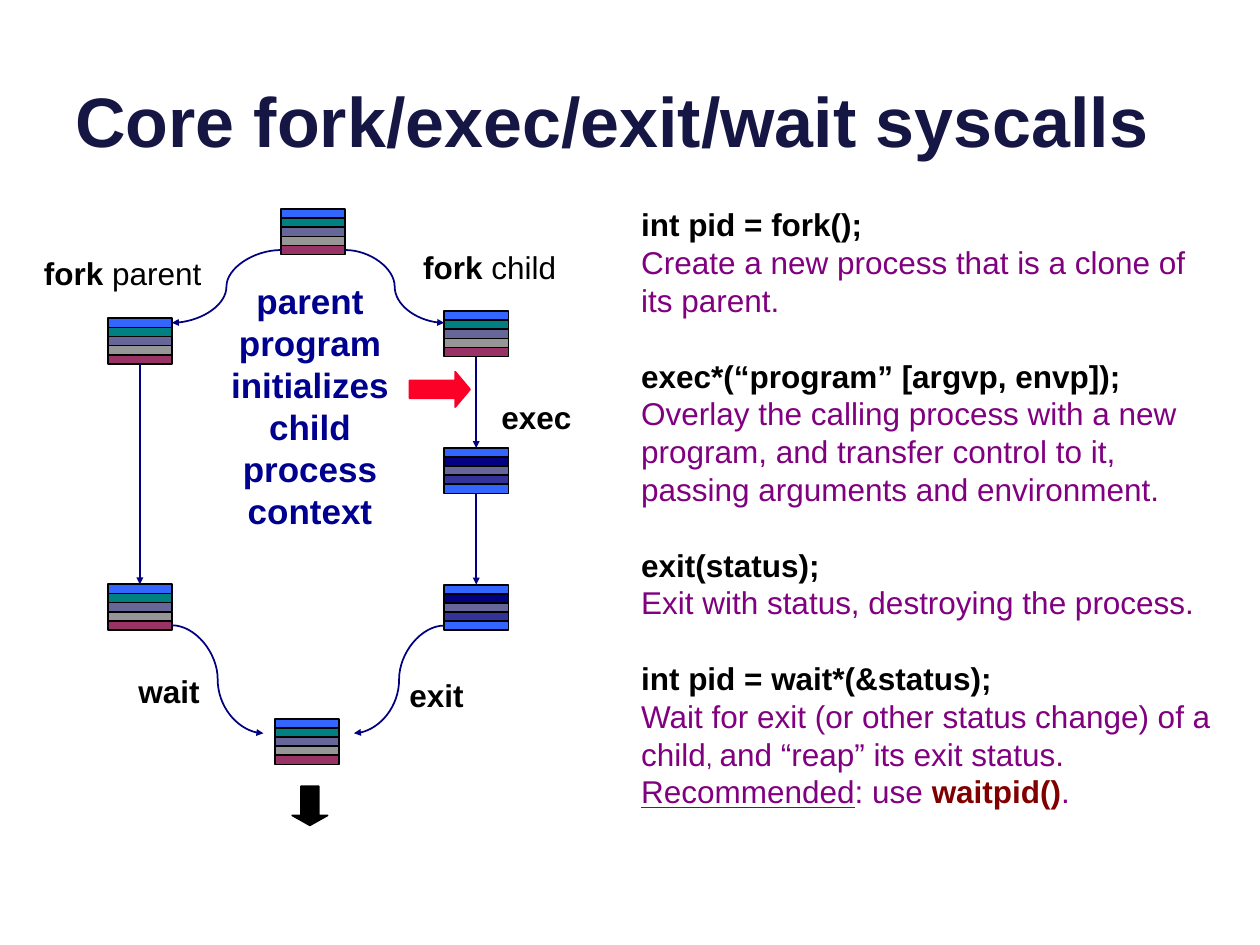
from lxml import etree
from pptx import Presentation
from pptx.dml.color import RGBColor
from pptx.enum.shapes import MSO_CONNECTOR, MSO_SHAPE
from pptx.enum.text import MSO_ANCHOR, PP_ALIGN
from pptx.oxml.ns import qn
from pptx.util import Pt

STRAIGHT, CURVE = MSO_CONNECTOR.STRAIGHT, MSO_CONNECTOR.CURVE
LAYER, DOWN_ARROW = MSO_SHAPE.FLOWCHART_PROCESS, MSO_SHAPE.DOWN_ARROW
TOP, MIDDLE, BOTTOM = MSO_ANCHOR.TOP, MSO_ANCHOR.MIDDLE, MSO_ANCHOR.BOTTOM
LEFT, CENTER = PP_ALIGN.LEFT, PP_ALIGN.CENTER
TOP_SIDE, BOTTOM_SIDE = 0, 2

FONT = "Arial"
BLACK, NAVY, PURPLE, MAROON = "000000", "000080", "800080", "800000"
PARENT_COLORS = ["3366FF", "008080", "666699", "969696", "993366"]
PROGRAM_COLORS = ["3366FF", "000080", "666699", "333399", "3366FF"]
LAYER_WIDTH, LAYER_HEIGHT = 36.7, 5.2

SYSCALLS = [
    ("int pid = fork();",
     [["Create a new process that is a clone of its parent."]]),
    ("exec*(“program” [argvp, envp]);",
     [["Overlay the calling process with a new program, and transfer "
       "control to it, passing arguments and environment."]]),
    ("exit(status);", [["Exit with status, destroying the process."]]),
    ("int pid = wait*(&status);",
     [["Wait for exit (or other status change) of a child",
       (", ", {"size": 14}), "and “reap” its exit status."],
      [("Recommended", {"underline": True}), ": use ",
       ("waitpid()", {"color": MAROON, "bold": True}), "."]]),
]


def color_of(hex_string):
    return RGBColor.from_string(hex_string)


def add_text(shapes, box, paragraphs, anchor=TOP, align=LEFT, wrap=True,
             gaps=(), **text_format):
    """Add a text box; each paragraph lists runs, as text or (text, format).

    gaps holds the indexes of paragraphs that have an empty line above them.
    """
    shape = shapes.add_textbox(*map(Pt, box))
    frame = shape.text_frame
    frame.word_wrap = wrap
    frame.vertical_anchor = anchor
    line_height = Pt(1.2 * text_format["size"])
    for index, runs in enumerate(paragraphs):
        paragraph = frame.paragraphs[0] if index == 0 else frame.add_paragraph()
        paragraph.alignment = align
        paragraph.line_spacing = line_height
        if index in gaps:
            paragraph.space_before = line_height
        for item in runs:
            text, changes = (item, {}) if isinstance(item, str) else item
            values = {**text_format, **changes}
            run = paragraph.add_run()
            run.text = text
            run.font.name = FONT
            run.font.size = Pt(values["size"])
            run.font.bold = values.get("bold", False)
            run.font.underline = values.get("underline", False)
            run.font.color.rgb = color_of(values["color"])
    return shape


def add_filled_shape(shapes, kind, box, fill, line):
    shape = shapes.add_shape(kind, *map(Pt, box))
    shape.shadow.inherit = False
    shape.fill.solid()
    shape.fill.fore_color.rgb = color_of(fill)
    shape.line.color.rgb = color_of(line)
    shape.line.width = Pt(1)
    return shape


def add_block_arrow(shapes, box, color, head, rotation=0):
    arrow = add_filled_shape(shapes, DOWN_ARROW, box, color, color)
    arrow.adjustments[1] = head
    arrow.rotation = rotation


def add_process(shapes, left, top, colors):
    """Draw a process as a stack of layers and return its layers."""
    group = shapes.add_group_shape()
    return [add_filled_shape(group.shapes, LAYER,
                             (left, top + row * LAYER_HEIGHT,
                              LAYER_WIDTH, LAYER_HEIGHT), color, BLACK)
            for row, color in enumerate(colors)]


def left_of(layer):
    return layer.left, layer.top + layer.height // 2


def right_of(layer):
    return layer.left + layer.width, layer.top + layer.height // 2


def add_arrow(shapes, kind, start, end):
    connector = shapes.add_connector(kind, *start, *end)
    connector.line.color.rgb = color_of(NAVY)
    connector.line.width = Pt(1)
    properties = connector._element.spPr
    tail = etree.SubElement(properties.find(qn("a:ln")), qn("a:tailEnd"))
    tail.set("type", "triangle")
    tail.set("w", "sm")
    tail.set("len", "sm")
    etree.SubElement(properties, qn("a:effectLst"))
    return connector


def join_processes(shapes, upper, lower):
    above, below = upper[-1], lower[0]
    center = above.left + above.width // 2
    connector = add_arrow(shapes, STRAIGHT,
                          (center, above.top + above.height),
                          (center, below.top))
    connector.begin_connect(above, BOTTOM_SIDE)
    connector.end_connect(below, TOP_SIDE)


def add_title(shapes, box):
    add_text(shapes, box, [["Core fork/exec/exit/wait syscalls"]],
             anchor=BOTTOM, size=40, bold=True, color="161645")


def add_lifecycle(shapes, box):
    x, y = box[:2]

    def process(left, top, colors=PARENT_COLORS):
        return add_process(shapes, x + left, y + top, colors)

    start = process(142.6, 0)
    parent = process(43.6, 62.4)
    child = process(235.8, 58.3)
    program = process(235.8, 136.5, PROGRAM_COLORS)
    exiting = process(235.8, 214.6, PROGRAM_COLORS)
    waiting = process(43.6, 214.4)
    process(139, 291.3)

    for upper, lower in [(parent, waiting), (child, program),
                         (program, exiting)]:
        join_processes(shapes, upper, lower)
    reap_y = Pt(y + 299.5)
    fork_end = right_of(parent[0])
    for begin, end in [
        (left_of(start[-1]), fork_end),
        (right_of(start[-1]), (child[0].left, fork_end[1])),
        (right_of(waiting[-1]), (Pt(x + 132.5), reap_y)),
        (left_of(exiting[-1]), (Pt(x + 184.3), reap_y)),
    ]:
        add_arrow(shapes, CURVE, begin, end)

    for left, top, width, name, role in [
        (0, 22.3, 105, "fork", " parent"),
        (216.7, 18.7, 91.4, "fork", " child"),
        (261.4, 104.4, 54.7, "exec", ""),
        (54, 260.7, 49.7, "wait", ""),
        (208.8, 263.5, 46, "exit", ""),
    ]:
        runs = [(name, {"bold": True})] + ([role] if role else [])
        add_text(shapes, (x + left, y + top, width, 28.8), [runs],
                 wrap=False, size=18, color=BLACK)

    add_block_arrow(shapes, (x + 149, y + 329.8, 20.2, 22.3), BLACK, 0.28)
    add_block_arrow(shapes, (x + 223.2, y + 85.7, 20.2, 34.6), "FC0128",
                    0.42, rotation=270)
    add_text(shapes, (x + 95.8, y + 36, 126.7, 152.6),
             [["parent"], ["program initializes child"], ["process context"]],
             anchor=MIDDLE, align=CENTER, size=20, bold=True, color="000090")


def add_syscall_list(shapes, box):
    paragraphs, gaps = [], []
    for call, description in SYSCALLS:
        if paragraphs:
            gaps.append(len(paragraphs))
        paragraphs.append([(call, {"bold": True, "color": BLACK})])
        paragraphs.extend(description)
    shape = add_text(shapes, box, paragraphs, gaps=gaps, size=18, color=PURPLE)
    shape.fill.solid()
    shape.fill.fore_color.rgb = color_of("FFFFFF")


def main():
    presentation = Presentation()
    presentation.slide_width, presentation.slide_height = Pt(720), Pt(540)
    slide = presentation.slides.add_slide(presentation.slide_layouts[6])
    add_title(slide.shapes, (36, -26.6, 648, 122.4))
    add_lifecycle(slide.shapes, (18, 119.5, 316, 352))
    add_syscall_list(slide.shapes, (359.3, 113.8, 341.3, 373))
    presentation.save("out.pptx")


if __name__ == "__main__":
    main()
